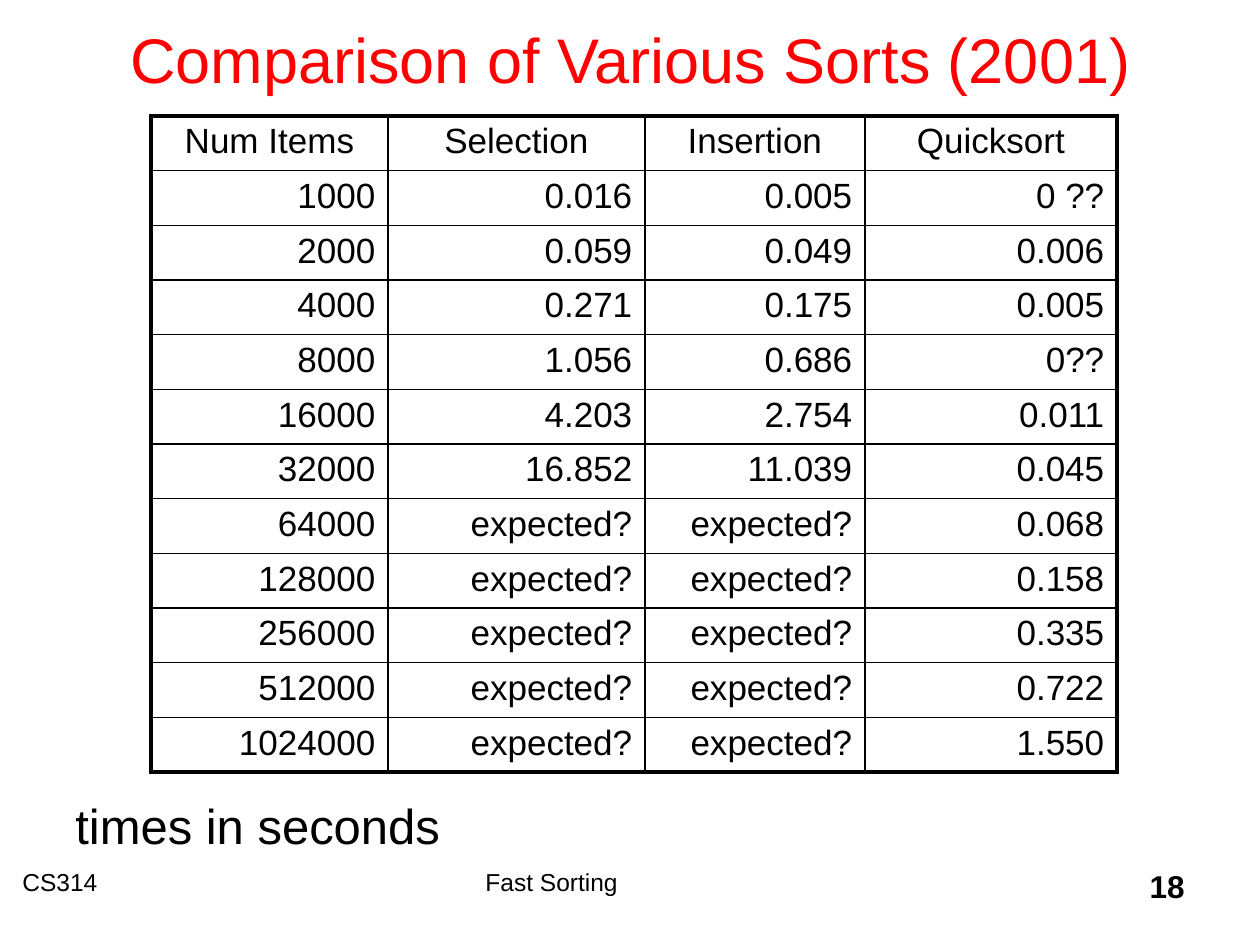
from lxml import etree
from pptx import Presentation
from pptx.dml.color import RGBColor
from pptx.enum.text import MSO_ANCHOR, PP_ALIGN
from pptx.oxml.ns import qn
from pptx.util import Pt

LEFT, CENTER, RIGHT = PP_ALIGN.LEFT, PP_ALIGN.CENTER, PP_ALIGN.RIGHT
MIDDLE = MSO_ANCHOR.MIDDLE
PX = 914400 / 126

THEME = {
    "font": "Arial", "ink": "000000", "title_color": "FF0000",
    "title": 36, "note": 28, "cell": 20, "number": 18, "footer": 14,
    "outer_line": 2.25, "inner_line": 1,
}


def px(length):
    return round(length * PX)


def write(frame, text, size, align=LEFT, color=THEME["ink"], bold=False):
    paragraph = frame.paragraphs[0]
    paragraph.alignment = align
    run = paragraph.add_run()
    run.text = text
    run.font.name = THEME["font"]
    run.font.size = Pt(size)
    run.font.bold = bold
    run.font.color.rgb = RGBColor.from_string(color)


prs = Presentation()
prs.slide_width, prs.slide_height = px(1260), px(945)
slide = prs.slides.add_slide(prs.slide_layouts[5])

# Title
title = slide.shapes.title
title.left, title.top, title.width, title.height = px(95), px(-21), px(1071), px(158)
title.text_frame.vertical_anchor = MIDDLE
write(title.text_frame, "Comparison of Various Sorts (2001)", THEME["title"],
      CENTER, THEME["title_color"])

# Timings table
timings = [
    ("Num Items", "Selection", "Insertion", "Quicksort"),
    ("1000", "0.016", "0.005", "0 ??"),
    ("2000", "0.059", "0.049", "0.006"),
    ("4000", "0.271", "0.175", "0.005"),
    ("8000", "1.056", "0.686", "0??"),
    ("16000", "4.203", "2.754", "0.011"),
    ("32000", "16.852", "11.039", "0.045"),
    ("64000", "expected?", "expected?", "0.068"),
    ("128000", "expected?", "expected?", "0.158"),
    ("256000", "expected?", "expected?", "0.335"),
    ("512000", "expected?", "expected?", "0.722"),
    ("1024000", "expected?", "expected?", "1.550"),
]
column_widths = [237, 257, 220, 252]
last_row, last_col = len(timings) - 1, len(column_widths) - 1
table = slide.shapes.add_table(len(timings), len(column_widths), px(151), px(116),
                               px(sum(column_widths)), px(656)).table
table.first_row = table.horz_banding = False
for column, width in zip(table.columns, column_widths):
    column.width = px(width)

for r, timing in enumerate(timings):
    for c, text in enumerate(timing):
        cell = table.cell(r, c)
        write(cell.text_frame, text, THEME["cell"], RIGHT if r else CENTER)

        # Heavy frame around the table, thin grid inside
        cell_properties = cell._tc.get_or_add_tcPr()
        on_frame = {"a:lnL": c == 0, "a:lnR": c == last_col,
                    "a:lnT": r == 0, "a:lnB": r == last_row}
        for side, outer in on_frame.items():
            weight = THEME["outer_line"] if outer else THEME["inner_line"]
            border = etree.SubElement(cell_properties, qn(side), w=str(Pt(weight)))
            border_fill = etree.SubElement(border, qn("a:solidFill"))
            etree.SubElement(border_fill, qn("a:srgbClr"), val=THEME["ink"])
        cell.fill.background()

# Unit note and footer: text, box, size, alignment, bold, wrap
captions = [
    ("times in seconds", (63, 789, 394, 72), THEME["note"], LEFT, False, False),
    ("CS314", (10, 861, 368, 63), THEME["footer"], LEFT, False, True),
    ("Fast Sorting", (473, 861, 420, 63), THEME["footer"], LEFT, False, True),
    ("18", (935, 861, 262, 63), THEME["number"], RIGHT, True, True),
]
for text, box, size, align, bold, wrap in captions:
    frame = slide.shapes.add_textbox(*map(px, box)).text_frame
    frame.word_wrap = wrap
    write(frame, text, size, align, bold=bold)

prs.save("out.pptx")
